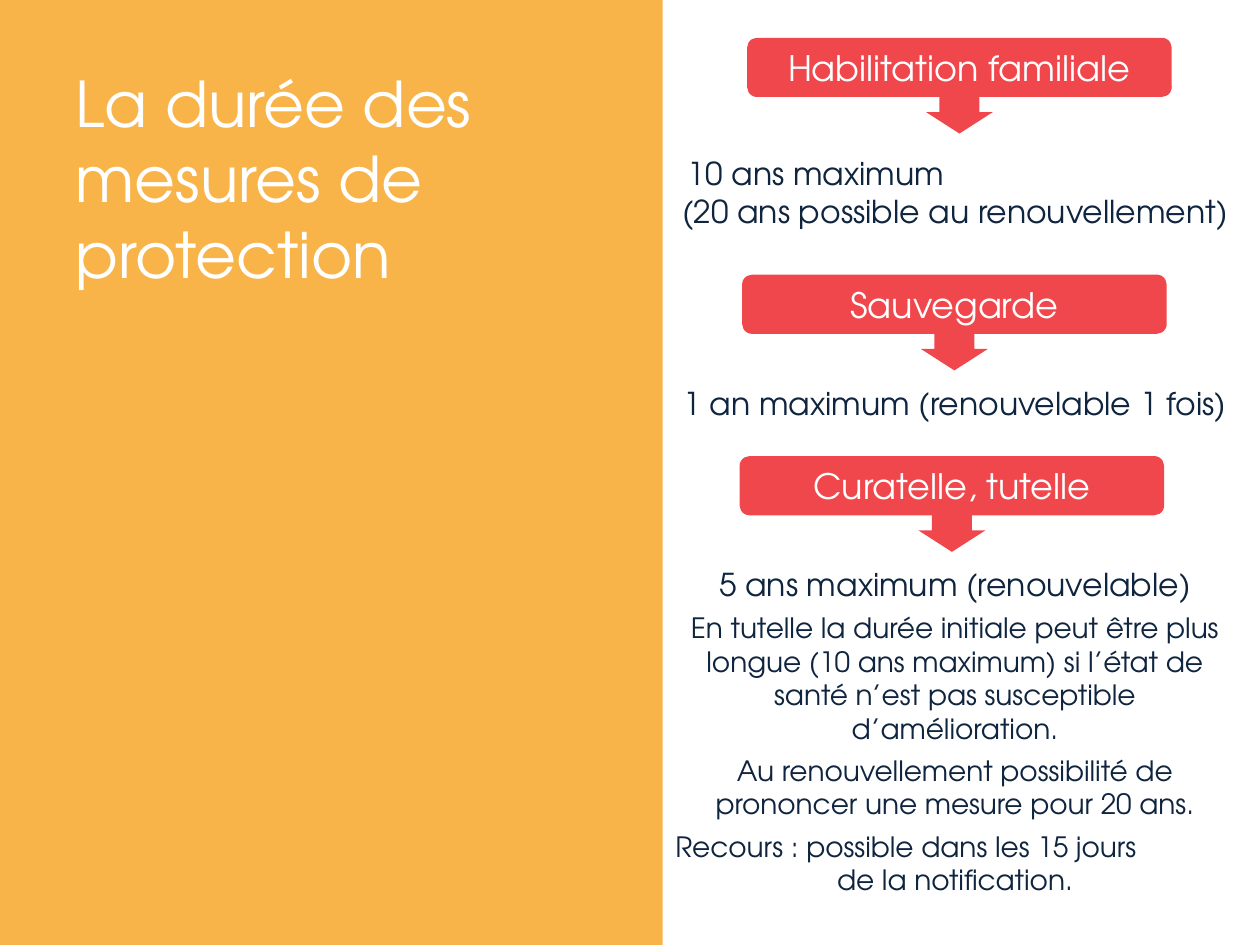
"""Slide on how long each legal protection measure lasts."""
from pptx import Presentation
from pptx.dml.color import RGBColor
from pptx.enum.shapes import MSO_SHAPE
from pptx.enum.text import MSO_ANCHOR, MSO_AUTO_SIZE, PP_ALIGN
from pptx.util import Inches, Pt
from lxml.etree import SubElement

FONT = "TeX Gyre Adventor"
COLORS = {"panel": "F8B449", "banner": "F0474C", "light": "FFFFFF", "dark": "0F243E"}
TITLE = "La durée des mesures de protection"
BANNERS = [
    ("Habilitation familiale", 5.93, 0.3),
    ("Sauvegarde", 5.89, 2.18),
    ("Curatelle, tutelle", 5.87, 3.62),
]
BANNER_W, BANNER_H = 3.37, 0.47
ARROW_W, ARROW_H, ARROW_DROP = 0.53, 0.34, 0.42
LEFT, CENTER = PP_ALIGN.LEFT, PP_ALIGN.CENTER
DURATIONS = [
    ("10 ans maximum", 18, 6, LEFT, 0.1),
    ("(20 ans possible au renouvellement)", 18, 0, CENTER, 0),
    ("1 an maximum (renouvelable 1 fois)", 18, 88.5, CENTER, 0),
    ("5 ans maximum (renouvelable)", 18, 81.5, CENTER, 0),
    ("En tutelle la durée initiale peut être plus longue (10 ans maximum) "
     "si l’état de santé n’est pas susceptible d’amélioration.", 16, 4.7, CENTER, 0),
    ("Au renouvellement possibilité de prononcer une mesure pour 20 ans.", 16, 4.7, CENTER, 0),
    ("Recours : possible dans les 15 jours", 16, 5, LEFT, 0),
    ("de la notification.", 16, 0, CENTER, 0),
]


def place(sp, x, y, w, h):
    sp.left, sp.top, sp.width, sp.height = map(Inches, (x, y, w, h))


def style(p, size, color, align):
    p.alignment = align
    for r in p.runs:
        r.font.name, r.font.size = FONT, Pt(size)
        r.font.color.rgb = RGBColor.from_string(COLORS[color])


def add_block(s, kind, color, x, y, w, h):
    sp = s.shapes.add_shape(kind, *map(Inches, (x, y, w, h)))
    sp.shadow.inherit = False
    sp.fill.solid()
    sp.fill.fore_color.rgb = RGBColor.from_string(COLORS[color])
    sp.line.fill.background()
    return sp


def add_title(s):
    sp = s.shapes.title
    place(sp, 0.5, 0.65, 4.76, 1.52)
    tf = sp.text_frame
    tf.text = TITLE
    tf.auto_size = MSO_AUTO_SIZE.NONE
    tf.vertical_anchor = MSO_ANCHOR.MIDDLE
    style(tf.paragraphs[0], 36, "light", LEFT)


def add_durations(s):
    sp = s.placeholders[1]
    place(sp, 5.26, 1.17, 4.64, 6.2)
    tf = sp.text_frame
    tf.text = "\n".join(row[0] for row in DURATIONS)
    tf.auto_size = MSO_AUTO_SIZE.NONE
    for p, (_, size, before, align, indent) in zip(tf.paragraphs, DURATIONS):
        style(p, size, "dark", align)
        p.space_before = Pt(before)
        pPr = p._p.get_or_add_pPr()
        pPr.set("marL", str(Inches(indent)))
        pPr.set("indent", "0")
        SubElement(pPr, "{http://schemas.openxmlformats.org/drawingml/2006/main}buNone")


def add_banner(s, text, x, y):
    arrow = add_block(s, MSO_SHAPE.DOWN_ARROW, "banner", x + (BANNER_W - ARROW_W) / 2,
                      y + ARROW_DROP, ARROW_W, ARROW_H)
    arrow.adjustments[0], arrow.adjustments[1] = 0.6, 0.5
    tf = add_block(s, MSO_SHAPE.ROUNDED_RECTANGLE, "banner", x, y, BANNER_W, BANNER_H).text_frame
    tf.text = text
    tf.vertical_anchor = MSO_ANCHOR.MIDDLE
    style(tf.paragraphs[0], 20, "light", CENTER)


def main():
    prs = Presentation()
    prs.slide_width, prs.slide_height = Inches(10), Inches(7.5)
    s = prs.slides.add_slide(prs.slide_layouts[1])
    panel = add_block(s, MSO_SHAPE.RECTANGLE, "panel", 0, 0, 5.26, 7.5)
    s.shapes.title.element.addprevious(panel.element)
    add_title(s)
    add_durations(s)
    for banner in BANNERS:
        add_banner(s, *banner)
    prs.save("out.pptx")


if __name__ == "__main__":
    main()
